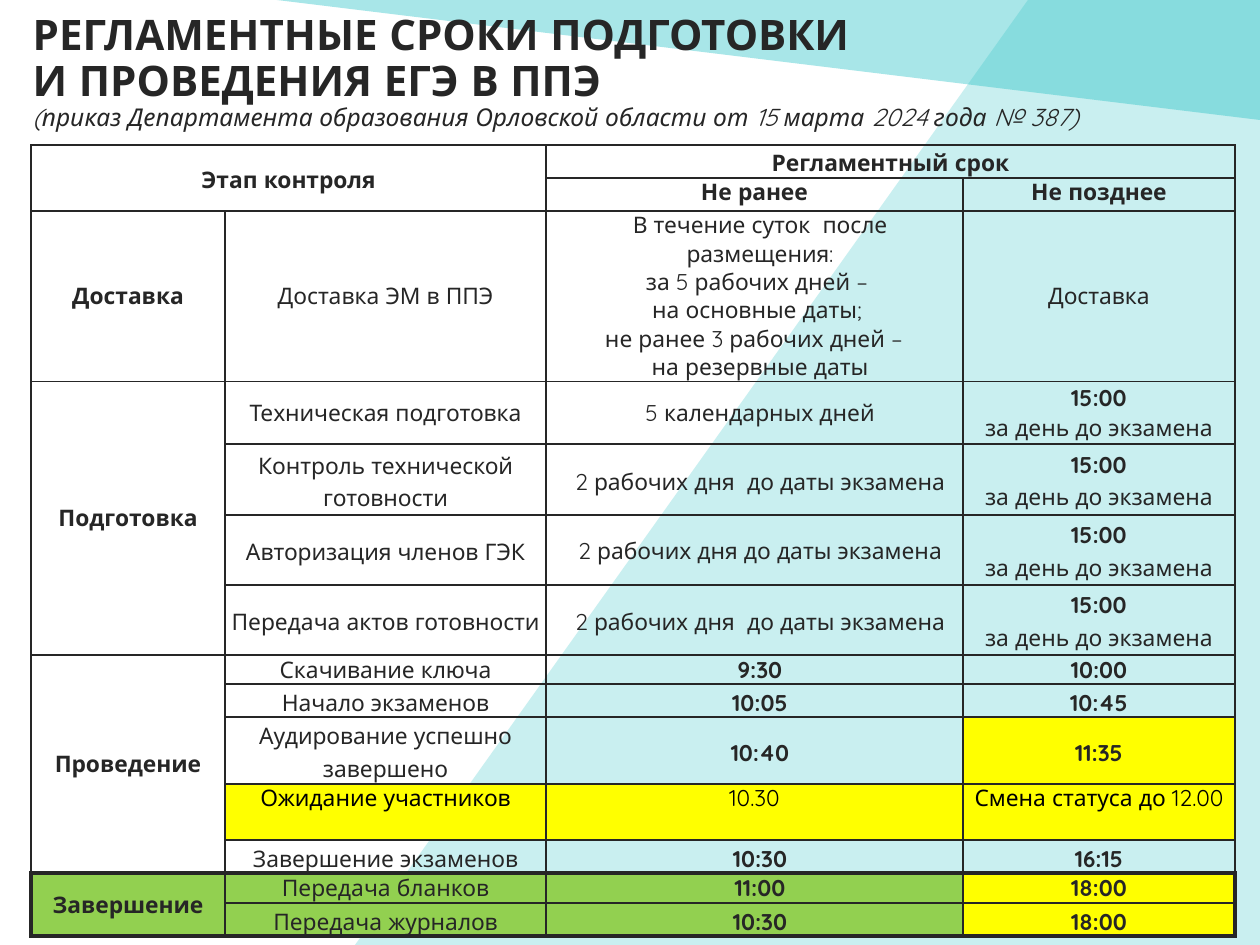
import pptx
import pptx.util
import pptx.dml.color
import pptx.enum.text
import pptx.oxml
import pptx.oxml.ns

RGB = pptx.dml.color.RGBColor
INK, BLACK = RGB(0x26, 0x26, 0x26), RGB(0, 0, 0)
TEAL = RGB(0x20, 0xC0, 0xC4)
YELLOW, GREEN = RGB(0xFF, 0xFF, 0), RGB(0x92, 0xD0, 0x50)
ANCHOR, ALIGN = pptx.enum.text.MSO_ANCHOR, pptx.enum.text.PP_ALIGN
FONT = "Quicksand"
PX = 914400 // 126
NO_STYLE = "{2D5ABB26-0587-4C30-8999-92F81FD0307C}"
THIN, THICK = 1, 2.25

# Content: a cell is a list of (text, format) paragraphs
TITLE = "РЕГЛАМЕНТНЫЕ СРОКИ ПОДГОТОВКИ \nИ ПРОВЕДЕНИЯ ЕГЭ В ППЭ\n"
ORDER = "(приказ Департамента образования Орловской области от 15 марта 2024 года № 387)"
BOLD = dict(bold=True)
WIDE = dict(spacing=1.15)
BOLD_WIDE = dict(bold=True, spacing=1.15)
WAIT = dict(color=BLACK)
DAY_BEFORE = [("15:00", dict(bold=True, spacing=pptx.util.Pt(17.6))),
              ("за день до экзамена", WIDE)]
DELIVERY = ("В течение суток  после размещения:\nза 5 рабочих дней – \n"
            "на основные даты; \nне ранее 3 рабочих дней –  \nна резервные даты")

HEADER = {(0, 0): [("Этап контроля", BOLD_WIDE)],
          (0, 2): [("Регламентный срок", BOLD_WIDE)],
          (1, 2): [("Не ранее", BOLD)],
          (1, 3): [("Не позднее", BOLD)]}

# (stage, [(height, step, not before, not later), ...])
STAGES = [
    ("Доставка", [
        (170, [("Доставка ЭМ в ППЭ", {})], [(DELIVERY, {})], [("Доставка", {})])]),
    ("Подготовка", [
        (63, [("Техническая подготовка", {})], [("5 календарных дней", {})],
         [("15:00", BOLD), ("за день до экзамена", dict(spacing=pptx.util.Pt(17.4)))]),
        (71, [("Контроль технической готовности", WIDE)],
         [("2 рабочих дня  до даты экзамена", WIDE)], DAY_BEFORE),
        (70, [("Авторизация членов ГЭК", WIDE)],
         [("2 рабочих дня до даты экзамена", dict(spacing=pptx.util.Pt(17.5)))], DAY_BEFORE),
        (70, [("Передача актов готовности", WIDE)],
         [("2 рабочих дня  до даты экзамена", WIDE)], DAY_BEFORE)]),
    ("Проведение", [
        (29, [("Скачивание ключа", {})], [("9:30", BOLD)], [("10:00", BOLD)]),
        (33, [("Начало экзаменов", WIDE)], [("10:05", BOLD_WIDE)], [("10:45", BOLD_WIDE)]),
        (67, [("Аудирование успешно завершено", WIDE)],
         [("10:40", BOLD_WIDE)], [("11:35", BOLD_WIDE)]),
        (56, [("Ожидание участников", WAIT)], [("10.30", WAIT)],
         [("Смена статуса до 12.00 ", WAIT)]),
        (33, [("Завершение экзаменов", WIDE)], [("10:30", BOLD_WIDE)],
         [("16:15", BOLD_WIDE)])]),
    ("Завершение", [
        (30, [("Передача бланков", {})], [("11:00", BOLD)], [("18:00", BOLD)]),
        (33, [("Передача журналов", WIDE)], [("10:30", BOLD_WIDE)], [("18:00", BOLD_WIDE)])]),
]

COLS = [194, 321, 417, 272]
HEADS = [33, 33]
ROWS = HEADS + [step[0] for _, steps in STAGES for step in steps]
WAIT_ROW, LAST_STAGE = 10, 12
FILLS = {(9, 3): YELLOW}
FILLS.update({(WAIT_ROW, c): YELLOW for c in (1, 2, 3)})
FILLS.update({(r, c): YELLOW if c == 3 else GREEN
              for r in (LAST_STAGE, LAST_STAGE + 1) for c in range(4)})

# Background facets: outline and opacity in percent
FACETS = [([(1260, 0), (1028, 0), (355, 945), (1260, 945)], 24),
          ([(277, 0), (1260, 120), (1260, 0)], 39)]


def add_text(p, text, size=13, bold=False, italic=False, color=INK,
             spacing=None, align=ALIGN.CENTER, indent=0):
    p.alignment = align
    if spacing:
        p.line_spacing = spacing
    if indent:
        p._p.get_or_add_pPr().set("marL", str(indent * PX))
    for i, line in enumerate(text.split("\n")):
        if i:
            p.add_line_break()
        if line:
            r = p.add_run()
            r.text = line
            r.font.name, r.font.size = FONT, pptx.util.Pt(size)
            r.font.bold, r.font.italic = bold, italic
            r.font.color.rgb = color


def add_facet(s, points, opacity):
    builder = s.shapes.build_freeform(*points[0], scale=PX)
    builder.add_line_segments(points[1:], close=True)
    sp = builder.convert_to_shape()
    sp.shadow.inherit = False
    sp.fill.solid()
    sp.fill.fore_color.rgb = TEAL
    sp.line.fill.background()
    clr = sp._element.spPr.find(".//" + pptx.oxml.ns.qn("a:srgbClr"))
    clr.append(pptx.oxml.parse_xml(
        f'<a:alpha {pptx.oxml.ns.nsdecls("a")} val="{opacity * 1000}"/>'))


def fill_cell(cell, paragraphs, anchor=ANCHOR.MIDDLE, indent=0, margin=6):
    cell.vertical_anchor = anchor
    cell.margin_left = cell.margin_right = margin * PX
    cell.margin_top = cell.margin_bottom = 0
    tf = cell.text_frame
    for i, (text, fmt) in enumerate(paragraphs):
        p = tf.add_paragraph() if i else tf.paragraphs[0]
        add_text(p, text, indent=indent, **fmt)


def format_box(cell, row, col):
    if (row, col) in FILLS:
        cell.fill.solid()
        cell.fill.fore_color.rgb = FILLS[row, col]
    else:
        cell.fill.background()
    # The last stage is framed by a thick line
    thick = {"L": row >= LAST_STAGE and col == 0,
             "R": row >= LAST_STAGE and col == len(COLS) - 1,
             "T": row == LAST_STAGE,
             "B": row in (LAST_STAGE - 1, len(ROWS) - 1)}
    # A merged stage cell takes its bottom line from its first row
    if cell.is_merge_origin and col == 0:
        thick["B"] = row + cell.span_height in (LAST_STAGE, len(ROWS))
    tc_pr = cell._tc.get_or_add_tcPr()
    for i, (side, heavy) in enumerate(thick.items()):
        width = pptx.util.Pt(THICK if heavy else THIN)
        tc_pr.insert(i, pptx.oxml.parse_xml(
            f'<a:ln{side} {pptx.oxml.ns.nsdecls("a")} w="{width}"><a:solidFill>'
            f'<a:srgbClr val="{INK}"/></a:solidFill></a:ln{side}>'))


def add_schedule(s):
    frame = s.shapes.add_table(len(ROWS), len(COLS), 31 * PX, 145 * PX,
                               sum(COLS) * PX, sum(ROWS) * PX)
    table = frame.table
    table.first_row = table.horz_banding = False
    table._tbl.tblPr.find(pptx.oxml.ns.qn("a:tableStyleId")).text = NO_STYLE
    for column, width in zip(table.columns, COLS):
        column.width = width * PX
    for row, height in zip(table.rows, ROWS):
        row.height = height * PX

    # Header
    table.cell(0, 0).merge(table.cell(1, 1))
    table.cell(0, 2).merge(table.cell(0, 3))
    for (row, col), paragraphs in HEADER.items():
        fill_cell(table.cell(row, col), paragraphs,
                  ANCHOR.MIDDLE if col == 0 else ANCHOR.TOP)

    # Stages and their steps
    row = len(HEADS)
    for stage, steps in STAGES:
        if len(steps) > 1:
            table.cell(row, 0).merge(table.cell(row + len(steps) - 1, 0))
        fill_cell(table.cell(row, 0), [(stage, BOLD)])
        for _, *cells in steps:
            for col, paragraphs in enumerate(cells, 1):
                if row == WAIT_ROW:
                    fill_cell(table.cell(row, col), paragraphs, ANCHOR.TOP, margin=9)
                else:
                    fill_cell(table.cell(row, col), paragraphs,
                              indent=11 if col == 2 else 0)
            row += 1

    for row in range(len(ROWS)):
        for col in range(len(COLS)):
            format_box(table.cell(row, col), row, col)


def main():
    prs = pptx.Presentation()
    prs.slide_width, prs.slide_height = 1260 * PX, 945 * PX
    s = prs.slides.add_slide(prs.slide_layouts[5])

    # Background
    for points, opacity in FACETS:
        add_facet(s, points, opacity)

    # Title, in front of the facets
    title = s.shapes.title
    s.shapes._spTree.append(title._element)
    title.left, title.top, title.width, title.height = (
        v * PX for v in (20, 0, 1235, 146))
    tf = title.text_frame
    tf.word_wrap = True
    tf.auto_size = pptx.enum.text.MSO_AUTO_SIZE.NONE
    tf.vertical_anchor = ANCHOR.MIDDLE
    p = tf.paragraphs[0]
    add_text(p, TITLE, size=24, bold=True, align=ALIGN.LEFT, spacing=0.9)
    add_text(p, ORDER, size=14, italic=True, align=ALIGN.LEFT, spacing=0.9)

    add_schedule(s)
    prs.save("out.pptx")


if __name__ == "__main__":
    main()
